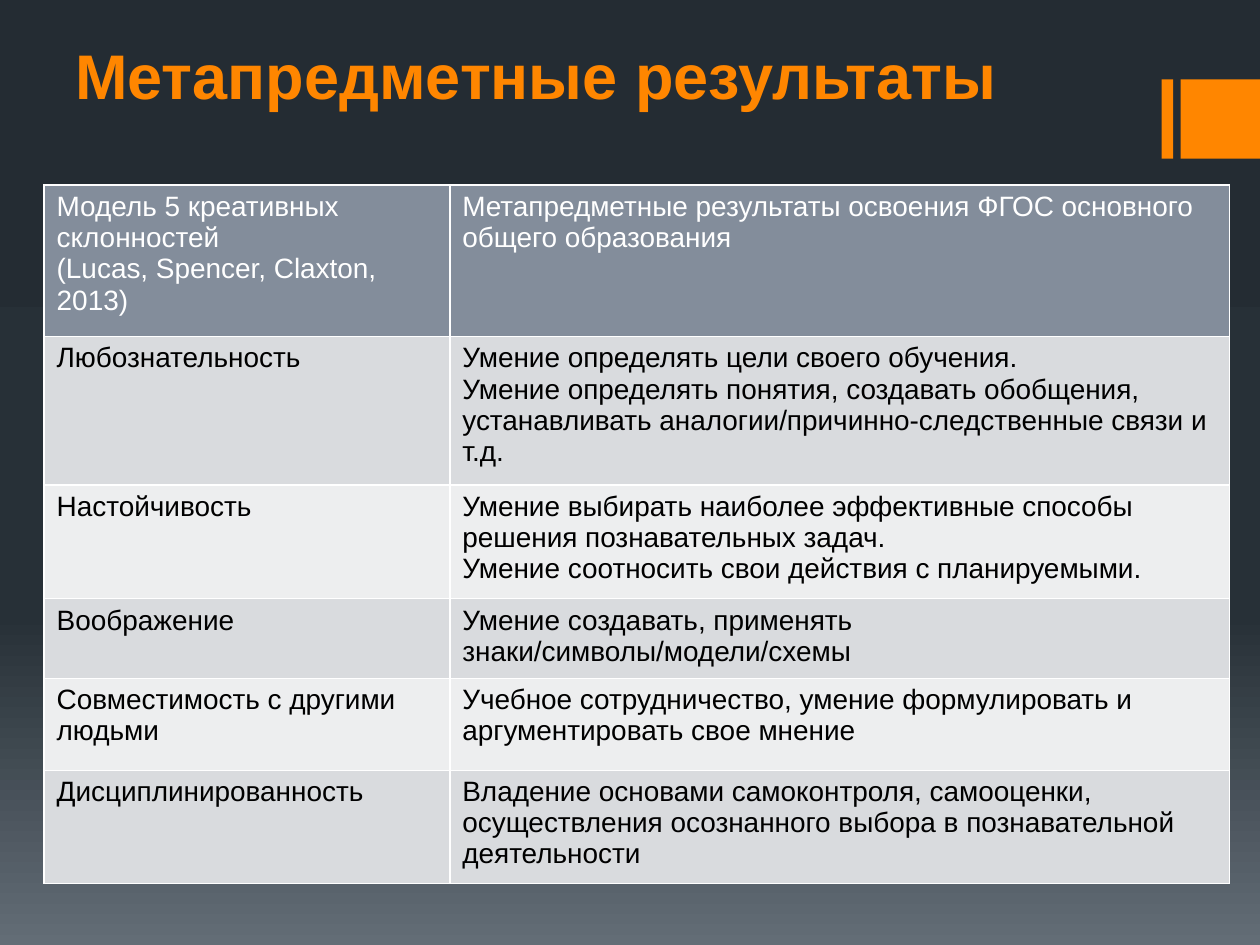
from copy import deepcopy
from typing import NamedTuple

from lxml import etree
from pptx import Presentation
from pptx.dml.color import RGBColor
from pptx.enum.shapes import MSO_SHAPE
from pptx.enum.text import MSO_ANCHOR
from pptx.oxml.ns import qn
from pptx.slide import Slide
from pptx.table import _Cell
from pptx.util import Inches, Pt

RECTANGLE = MSO_SHAPE.RECTANGLE
BOTTOM = MSO_ANCHOR.BOTTOM
FONT = "Arial"
ORANGE = "FF8600"
WHITE = "FFFFFF"
BLACK = "000000"
HEADER_FILL = "838D9B"
BAND_FILLS = ("EDEEEF", "D9DBDE")
BACKGROUND_STOPS = ((0, "242C33"), (0.65, "273037"), (1, "636D76"))
COLUMN_WIDTHS = (3.22, 6.19)


class Bar(NamedTuple):
    left: float
    width: float


class Row(NamedTuple):
    height: float
    disposition: str
    results: str


BARS = (Bar(9.22, 0.09), Bar(9.37, 0.63))
ROWS = (
    Row(1.2, "Модель 5 креативных склонностей\n(Lucas, Spencer, Claxton, 2013)",
        "Метапредметные результаты освоения ФГОС основного общего образования"),
    Row(1.18, "Любознательность",
        "Умение определять цели своего обучения.\n"
        "Умение определять понятия, создавать обобщения, "
        "устанавливать аналогии/причинно-следственные связи и т.д."),
    Row(0.88, "Настойчивость",
        "Умение выбирать наиболее эффективные способы решения познавательных задач.\n"
        "Умение соотносить свои действия с планируемыми."),
    Row(0.63, "Воображение", "Умение создавать, применять знаки/символы/модели/схемы"),
    Row(0.73, "Совместимость с другими людьми",
        "Учебное сотрудничество, умение формулировать и аргументировать свое мнение"),
    Row(0.9, "Дисциплинированность",
        "Владение основами самоконтроля, самооценки, "
        "осуществления осознанного выбора в познавательной деятельности"),
)


def color(value: str) -> RGBColor:
    """Turn a hex string into a colour."""
    return RGBColor.from_string(value)


def write_text(text_frame, text: str, size: float, text_color: str, bold: bool = False) -> None:
    """Write the text and set the font of every paragraph."""
    text_frame.text = text
    text_frame.word_wrap = True
    for paragraph in text_frame.paragraphs:
        font = paragraph.font
        font.name, font.size, font.bold = FONT, Pt(size), bold
        font.color.rgb = color(text_color)


def paint_background(slide: Slide) -> None:
    """Fill the slide with a vertical gradient of three stops."""
    fill = slide.background.fill
    fill.gradient()
    fill.gradient_angle = 270
    stop_list = next(slide.element.iter(qn("a:gsLst")))
    stop_list.append(deepcopy(stop_list[-1]))
    for stop, (position, stop_color) in zip(fill.gradient_stops, BACKGROUND_STOPS):
        stop.position = position
        stop.color.rgb = color(stop_color)


def add_bar(slide: Slide, bar: Bar) -> None:
    """Draw one accent bar at the right edge."""
    shape = slide.shapes.add_shape(
        RECTANGLE, Inches(bar.left), Inches(0.63), Inches(bar.width), Inches(0.63))
    shape.shadow.inherit = False
    shape.fill.solid()
    shape.fill.fore_color.rgb = color(ORANGE)
    shape.line.fill.background()


def add_title(slide: Slide, text: str) -> None:
    """Add the slide heading."""
    title = slide.shapes.add_textbox(Inches(0.5), Inches(0.3), Inches(9), Inches(0.64))
    write_text(title.text_frame, text, 36, ORANGE, bold=True)
    title.text_frame.vertical_anchor = BOTTOM


def add_borders(cell: _Cell, border_color: str, width: float) -> None:
    """Draw a line on all four sides of a cell."""
    properties = cell._tc.get_or_add_tcPr()
    for index, side in enumerate(("a:lnL", "a:lnR", "a:lnT", "a:lnB")):
        line = etree.Element(qn(side), w=str(Pt(width)))
        solid_fill = etree.SubElement(line, qn("a:solidFill"))
        etree.SubElement(solid_fill, qn("a:srgbClr"), val=border_color)
        properties.insert(index, line)


def add_results_table(slide: Slide, rows: tuple[Row, ...]) -> None:
    """Add the table that matches creative dispositions with results."""
    table = slide.shapes.add_table(
        len(rows), len(COLUMN_WIDTHS), Inches(0.35), Inches(1.47),
        Inches(sum(COLUMN_WIDTHS)), Inches(sum(row.height for row in rows))).table
    table.first_row = table.horz_banding = False
    for column, width in zip(table.columns, COLUMN_WIDTHS):
        column.width = Inches(width)
    for row_index, row in enumerate(rows):
        table.rows[row_index].height = Inches(row.height)
        is_header = row_index == 0
        for column_index, text in enumerate((row.disposition, row.results)):
            cell = table.cell(row_index, column_index)
            write_text(cell.text_frame, text, 16, WHITE if is_header else BLACK)
            cell.fill.solid()
            cell.fill.fore_color.rgb = color(HEADER_FILL if is_header else BAND_FILLS[row_index % 2])
            add_borders(cell, WHITE, 1)


def main() -> None:
    """Build the slide and save it."""
    presentation = Presentation()
    presentation.slide_width, presentation.slide_height = Inches(10), Inches(7.5)
    slide = presentation.slides.add_slide(presentation.slide_layouts[6])
    paint_background(slide)
    for bar in BARS:
        add_bar(slide, bar)
    add_title(slide, "Метапредметные результаты")
    add_results_table(slide, ROWS)
    presentation.save("out.pptx")


if __name__ == "__main__":
    main()
